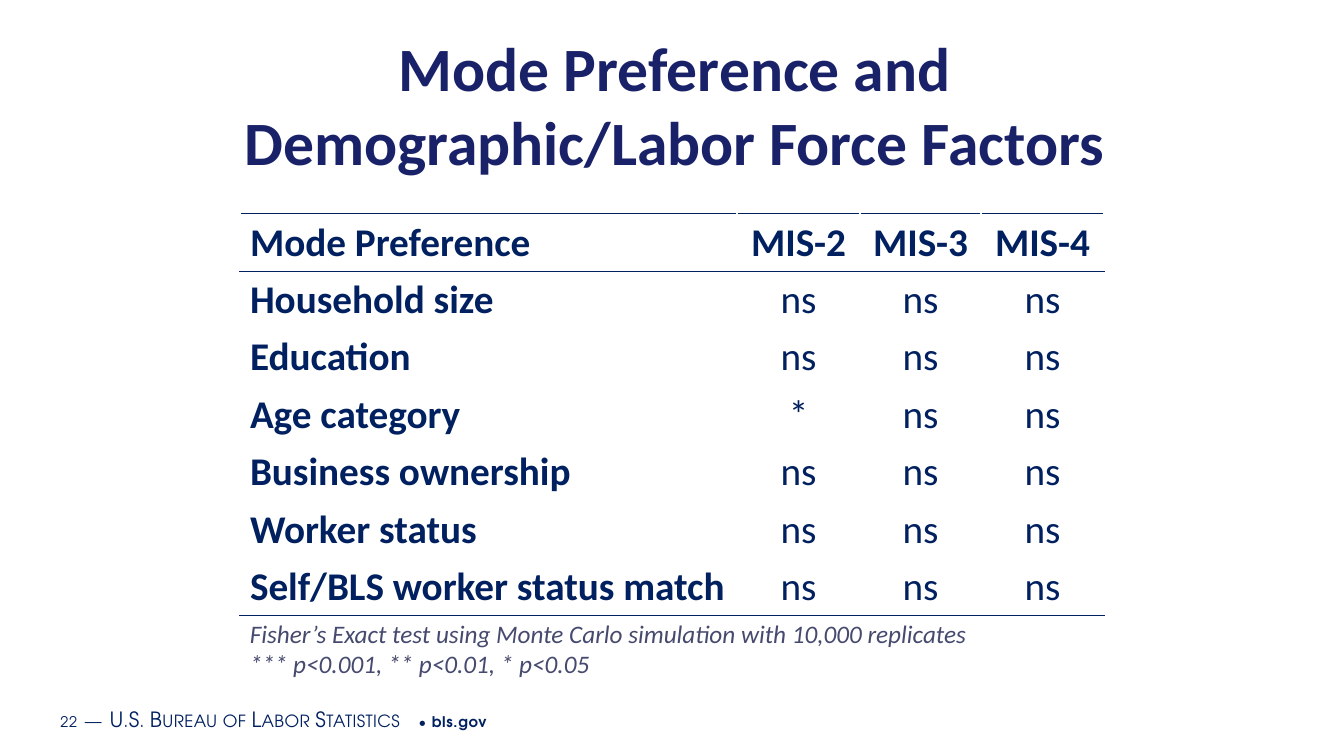
from lxml.etree import SubElement
from pptx import Presentation
from pptx.dml.color import RGBColor
from pptx.enum.text import MSO_ANCHOR as Anchor, MSO_AUTO_SIZE as AutoSize, PP_ALIGN as Align
from pptx.oxml.ns import qn
from pptx.util import Inches, Pt

NAVY, TITLE_BLUE, NOTE_GRAY = "002060", "192168", "464A6E"
BODY_FONT, FOOTER_FONT = "Calibri", "TeX Gyre Adventor"

TITLE_LINES = ["Mode Preference and", "Demographic/Labor Force Factors"]
NOTE_LINES = ["Fisher’s Exact test using Monte Carlo simulation with 10,000 replicates",
              "*** p<0.001, ** p<0.01, * p<0.05"]
ROWS = [
    ["Mode Preference", "MIS-2", "MIS-3", "MIS-4"],
    ["Household size", "ns", "ns", "ns"],
    ["Education", "ns", "ns", "ns"],
    ["Age category", "*", "ns", "ns"],
    ["Business ownership", "ns", "ns", "ns"],
    ["Worker status", "ns", "ns", "ns"],
    ["Self/BLS worker status match", "ns", "ns", "ns"],
]
COL_WIDTHS = [4.93, 1.22, 1.2, 1.22]
ROW_HEIGHT = 0.57


def rgb(color):
    return RGBColor.from_string(color)


def add_run(p, text, size, color, font=BODY_FONT, bold=False, italic=False):
    r = p.add_run()
    r.text = text
    r.font.name, r.font.size = font, Pt(size)
    r.font.bold, r.font.italic = bold, italic
    r.font.color.rgb = rgb(color)
    return r


def add_lines(p, lines, *args, **kwargs):
    for i, line in enumerate(lines):
        if i:
            p.add_line_break()
        add_run(p, line, *args, **kwargs)


def add_text_box(s, left, top, width, height):
    tf = s.shapes.add_textbox(Inches(left), Inches(top), Inches(width), Inches(height)).text_frame
    tf.word_wrap = True
    return tf


# Title
def add_title(s, left, top, width, height):
    sp = s.shapes.title
    sp.left, sp.top = Inches(left), Inches(top)
    sp.width, sp.height = Inches(width), Inches(height)
    tf = sp.text_frame
    tf.auto_size, tf.vertical_anchor = AutoSize.NONE, Anchor.TOP
    p = tf.paragraphs[0]
    p.alignment = Align.CENTER
    add_lines(p, TITLE_LINES, 44, TITLE_BLUE, bold=True)


# Table of test results
def add_rule(cell, side):
    ln = SubElement(cell._tc.get_or_add_tcPr(), qn(f"a:{side}"), w=str(Pt(1)))
    fill = SubElement(ln, qn("a:solidFill"))
    SubElement(fill, qn("a:srgbClr"), val=NAVY)


def add_results_table(s, left, top):
    last = len(ROWS) - 1
    table = s.shapes.add_table(
        len(ROWS), len(COL_WIDTHS), Inches(left), Inches(top),
        Inches(sum(COL_WIDTHS)), Inches(ROW_HEIGHT * len(ROWS))).table
    table.first_row = table.horz_banding = False
    for col, width in zip(table.columns, COL_WIDTHS):
        col.width = Inches(width)
    for i, row in enumerate(ROWS):
        table.rows[i].height = Inches(ROW_HEIGHT)
        for j, text in enumerate(row):
            cell = table.cell(i, j)
            if i in (0, 1):
                add_rule(cell, "lnT")
            if i in (0, last):
                add_rule(cell, "lnB")
            cell.fill.background()
            p = cell.text_frame.paragraphs[0]
            p.alignment = Align.CENTER if j else Align.LEFT
            add_run(p, text, 28, NAVY, bold=i == 0 or j == 0)


# Significance note
def add_note(s, left, top, width, height):
    tf = add_text_box(s, left, top, width, height)
    add_lines(tf.paragraphs[0], NOTE_LINES, 18, NOTE_GRAY, italic=True)


# Footer with page number and agency
def add_footer(s, left, top, width, height):
    tf = add_text_box(s, left, top, width, height)
    tf.vertical_anchor = Anchor.MIDDLE
    tf.margin_left = tf.margin_right = Inches(0.07)
    tf.margin_top = tf.margin_bottom = Inches(0.04)
    p = tf.paragraphs[0]
    # text, size, letter spacing in hundredths of a point, small caps, bold
    for text, size, spacing, small, bold in [
        ("22", 10.5, 50, False, False),
        (" ", 16, 50, False, False),
        ("—", 15, 30, True, False),
        (" ", 16, 50, False, False),
        ("U.S. Bureau of Labor Statistics", 15, 30, True, False),
        (" • ", 10.5, 50, False, False),
        ("bls.gov", 10.5, 50, False, True),
    ]:
        r = add_run(p, text, size, NAVY, FOOTER_FONT, bold)
        rPr = r._r.get_or_add_rPr()
        rPr.set("spc", str(spacing))
        if small:
            rPr.set("cap", "small")


def main():
    prs = Presentation()
    prs.slide_width, prs.slide_height = Inches(13.33), Inches(7.5)
    s = prs.slides.add_slide(prs.slide_layouts[5])
    s.background.fill.solid()
    s.background.fill.fore_color.rgb = rgb("FFFFFF")
    add_footer(s, 0.53, 6.93, 8.47, 0.4)
    add_title(s, 0.37, 0.25, 12.65, 0.88)
    add_results_table(s, 2.38, 2.12)
    add_note(s, 2.38, 6.08, 8.57, 0.98)
    prs.save("out.pptx")


if __name__ == "__main__":
    main()
